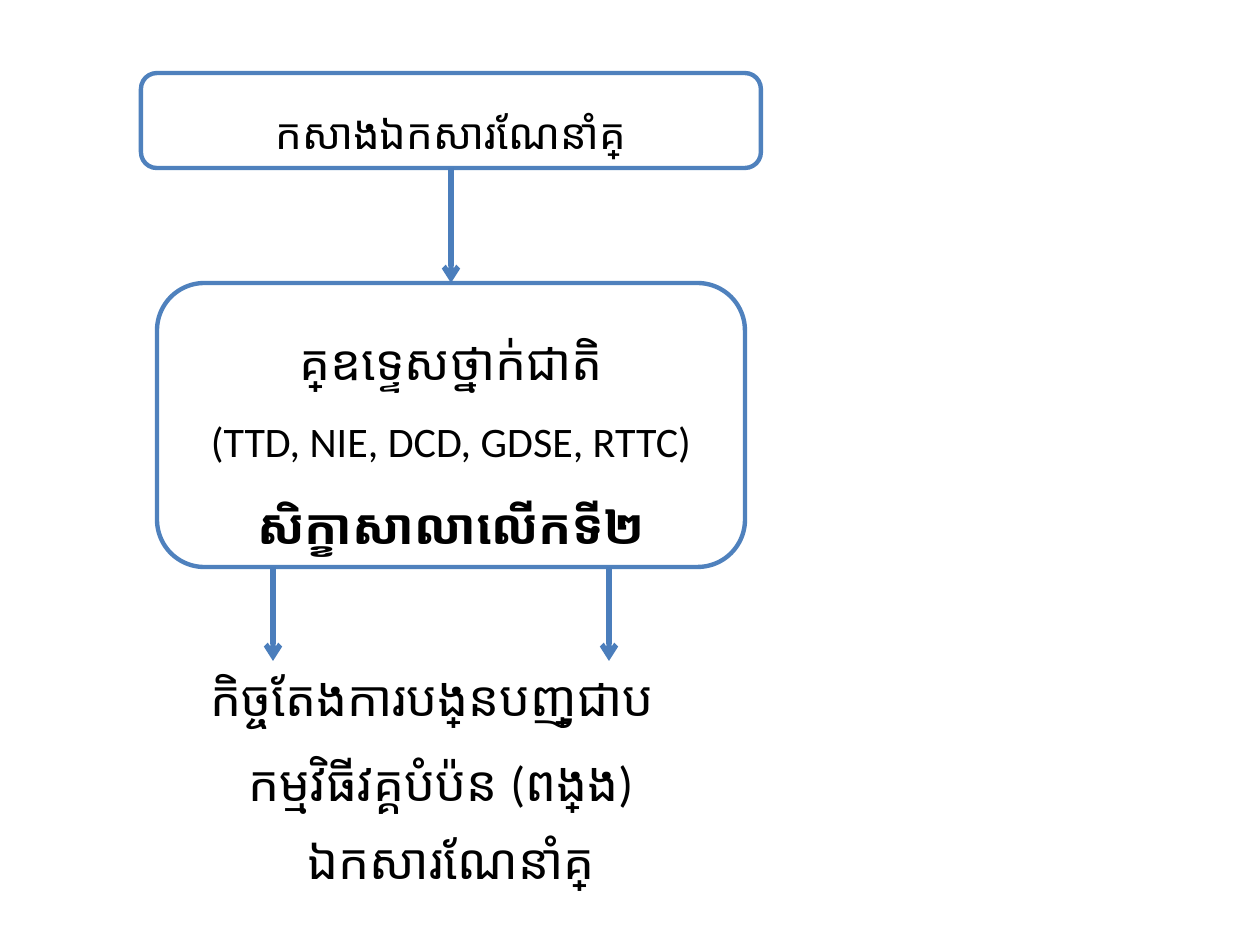
from lxml import etree
from pptx import Presentation
from pptx.dml.color import RGBColor
from pptx.enum.shapes import MSO_CONNECTOR, MSO_SHAPE
from pptx.enum.text import MSO_ANCHOR, MSO_AUTO_SIZE, PP_ALIGN
from pptx.oxml.ns import qn
from pptx.util import Emu, Pt

STRAIGHT = MSO_CONNECTOR.STRAIGHT
PROCESS = MSO_SHAPE.FLOWCHART_ALTERNATE_PROCESS
TOP_ANCHOR = MSO_ANCHOR.TOP
GROW = MSO_AUTO_SIZE.SHAPE_TO_FIT_TEXT
CENTER = PP_ALIGN.CENTER
TOP, BOTTOM = 0, 2
WHITE, BLACK, BLUE, ARROW_BLUE = "FFFFFF", "000000", "4F81BD", "4B7EBC"


def px(n):
    return Emu(round(n * 914400 / 126))


def color(value):
    return RGBColor.from_string(value)


def add_lines(tf, lines, spacing=None):
    for i, (text, size, bold) in enumerate(lines):
        p = tf.paragraphs[0] if i == 0 else tf.add_paragraph()
        p.alignment = CENTER
        p.line_spacing = spacing
        r = p.add_run()
        r.text = text
        r.font.name = "Calibri"
        r.font.size = Pt(size)
        r.font.bold = bold
        r.font.color.rgb = color(BLACK)


def add_process(s, box, lines):
    sp = s.shapes.add_shape(PROCESS, *map(px, box))
    sp.shadow.inherit = False
    sp.fill.solid()
    sp.fill.fore_color.rgb = color(WHITE)
    sp.line.color.rgb = color(BLUE)
    sp.line.width = Pt(2.5)
    tf = sp.text_frame
    tf.word_wrap = True
    tf.vertical_anchor = TOP_ANCHOR
    tf.margin_left = tf.margin_right = tf.margin_top = tf.margin_bottom = px(5)
    add_lines(tf, lines, 1.5)
    return sp


def add_arrow(s, x, top, bottom):
    line = s.shapes.add_connector(STRAIGHT, px(x), px(top), px(x), px(bottom))
    line.line.color.rgb = color(ARROW_BLUE)
    line.line.width = Pt(3)
    ln = line.line._get_or_add_ln()
    etree.SubElement(ln, qn("a:tailEnd"), type="arrow")
    etree.SubElement(ln.getparent(), qn("a:effectLst"))
    return line


def add_outputs(s, box, outputs):
    left, top, width, height = box
    for text, dx, dy, w, wrap in outputs:
        tb = s.shapes.add_textbox(px(left + dx), px(top + dy), px(w or width), px(height))
        tf = tb.text_frame
        tf.word_wrap = wrap
        tf.auto_size = GROW
        add_lines(tf, [(text, 28, False)])


def add_flow(s, box):
    left, top, width, height = box
    guide = add_process(s, (left, top, width, 95), [("កសាងឯកសារណែនាំគ្រូ", 24, False)])
    trainers_top = top + 210
    trainers = add_process(s, (left + 16, trainers_top, width - 32, 284), [
        ("គ្រូឧទេ្ទសថ្នាក់ជាតិ", 28, False),
        ("(TTD, NIE, DCD, GDSE, RTTC)", 24, False),
        ("សិក្ខាសាលាលើកទី២", 28, True),
    ])
    link = add_arrow(s, left + width / 2, top + 95, trainers_top)
    link.begin_connect(guide, BOTTOM)
    link.end_connect(trainers, TOP)
    outputs_top = top + height - 235
    for dx in (132, 468):
        add_arrow(s, left + dx, trainers_top + 284, outputs_top)
    add_outputs(s, (left - 15, outputs_top, 630, 72), [
        ("កិច្ចតែងការបង្រៀនបញ្រ្ជាប", 2, 0, 608, False),
        ("កម្មវិធីវគ្គបំប៉ន (ពង្រាង)", 0, 85, None, True),
        ("ឯកសារណែនាំគ្រូ", 125, 163, 400, False),
    ])


def main():
    prs = Presentation()
    prs.slide_width, prs.slide_height = px(1260), px(945)
    s = prs.slides.add_slide(prs.slide_layouts[6])
    s.background.fill.solid()
    s.background.fill.fore_color.rgb = color(WHITE)
    add_flow(s, (141, 73, 620, 823))
    prs.save("out.pptx")


if __name__ == "__main__":
    main()
